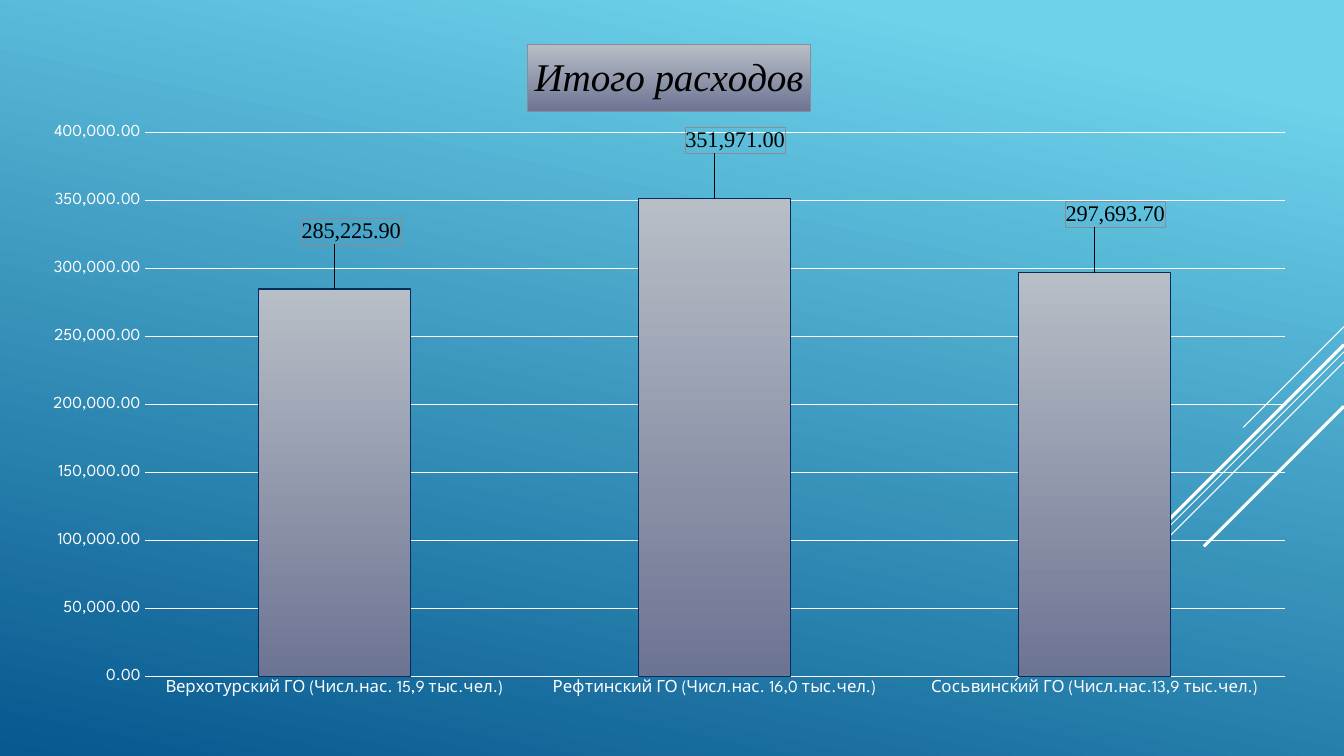
from dataclasses import dataclass

from lxml.etree import SubElement
from pptx import Presentation
from pptx.chart.data import CategoryChartData
from pptx.dml.color import RGBColor
from pptx.enum.chart import XL_CHART_TYPE, XL_LABEL_POSITION, XL_TICK_MARK
from pptx.enum.shapes import MSO_CONNECTOR
from pptx.oxml import parse_xml
from pptx.oxml.ns import nsdecls, qn
from pptx.util import Pt

TITLE = "Итого расходов"
EXPENSES = {
    "Верхотурский ГО (Числ.нас. 15,9 тыс.чел.)": 285225.9,
    "Рефтинский ГО (Числ.нас. 16,0 тыс.чел.)": 351971,
    "Сосьвинский ГО (Числ.нас.13,9 тыс.чел.)": 297693.7,
}
NUMBER_FORMAT = "#,##0.00"
LABEL_OFFSETS = [(0.013, -0.06), (0.016, -0.06), (0.016, -0.06)]  # shares of the chart

PAGE_WIDTH, PAGE_HEIGHT = 960, 540
CHART_BOX = (20.9, 18.7, 915.1, 488.9)
PLOT_AREA = {"x": 0.09, "y": 0.156, "w": 0.89, "h": 0.795}
TITLE_CORNER = {"x": 0.389, "y": 0.027}

# Diagonals rising at 45 degrees to the right edge: (height at the edge, run, width)
DIAGONALS = [
    (233.3, 72, 0.75),
    (251.3, 234.7, 0.75),
    (258.5, 149, 0.75),
    (246.2, 137.5, 2.25),
    (290.2, 100.1, 2.25),
]


@dataclass(frozen=True)
class Theme:
    sky: tuple = ((0.1, "6ED2EB"), (1, "06588E"))
    steel: tuple = ((0, "B8BEC6"), (1, "6C7493"))
    white: str = "FFFFFF"
    black: str = "000000"
    bar_edge: str = "052E5F"
    frame: str = "8F8A98"
    axis_font: str = "League Spartan"
    accent_font: str = "Times New Roman"
    axis_size: int = 12
    label_size: int = 16
    title_size: int = 28


THEME = Theme()


def fill_gradient(fill, stops, clockwise_angle):
    fill.gradient()
    fill.gradient_angle = 360 - clockwise_angle
    for stop, (position, color) in zip(fill.gradient_stops, stops):
        stop.position = position
        stop.color.rgb = RGBColor.from_string(color)


def set_line(line, color, width):
    line.color.rgb = RGBColor.from_string(color)
    line.width = Pt(width)


def set_font(font, name, size, color, italic=False):
    font.name = name
    font.size = Pt(size)
    font.color.rgb = RGBColor.from_string(color)
    font.bold = False
    font.italic = italic


def make_layout(places, edge=False, inner=False):
    """Return a manual chart layout; edge measures from the chart's corner."""
    layout = parse_xml(f"<c:layout {nsdecls('c')}><c:manualLayout/></c:layout>")
    settings = {"layoutTarget": "inner"} if inner else {}
    if edge:
        settings.update(xMode="edge", yMode="edge")
    for tag, value in {**settings, **places}.items():
        SubElement(layout[0], qn(f"c:{tag}")).set("val", str(value))
    return layout


def drop_layout(element):
    for layout in element.findall(qn("c:layout")):
        element.remove(layout)


def draw_diagonals(page):
    for edge_height, run, width in DIAGONALS:
        diagonal = page.shapes.add_connector(
            MSO_CONNECTOR.STRAIGHT, Pt(PAGE_WIDTH), Pt(edge_height),
            Pt(PAGE_WIDTH - run), Pt(edge_height + run))
        set_line(diagonal.line, THEME.white, width)
        SubElement(diagonal._element.spPr, qn("a:effectLst"))


def style_title(chart):
    title = chart.chart_title
    title.text_frame.text = TITLE
    set_font(title.text_frame.paragraphs[0].font, THEME.accent_font,
             THEME.title_size, THEME.black, italic=True)
    fill_gradient(title.format.fill, THEME.steel, 90)
    set_line(title.format.line, THEME.frame, 0.75)
    element = title._element
    drop_layout(element)
    element.find(qn("c:tx")).addnext(make_layout(TITLE_CORNER, edge=True))


def style_axes(chart):
    for axis in (chart.category_axis, chart.value_axis):
        set_font(axis.tick_labels.font, THEME.axis_font, THEME.axis_size, THEME.white)
        axis.major_tick_mark = axis.minor_tick_mark = XL_TICK_MARK.NONE
        axis.format.line.fill.background()
    values = chart.value_axis
    values.minimum_scale, values.maximum_scale, values.major_unit = 0, 400000, 50000
    values.tick_labels.number_format = NUMBER_FORMAT
    values.tick_labels.number_format_is_linked = False
    set_line(values.major_gridlines.format.line, THEME.white, 0.75)


def style_labels(series):
    labels = series.data_labels
    labels.show_value = True
    labels.number_format = NUMBER_FORMAT
    labels.number_format_is_linked = False
    set_font(labels.font, THEME.accent_font, THEME.label_size, THEME.black)
    for index, (x, y) in enumerate(LABEL_OFFSETS):
        label = series.points[index].data_label
        set_font(label.font, THEME.accent_font, THEME.label_size, THEME.black)
        label.position = XL_LABEL_POSITION.OUTSIDE_END
        element = labels._element.findall(qn("c:dLbl"))[index]
        for old in element.findall(qn("c:spPr")):
            element.remove(old)
        number_format = parse_xml(
            f'<c:numFmt {nsdecls("c")} formatCode="{NUMBER_FORMAT}" sourceLinked="0"/>')
        frame = parse_xml(
            f'<c:spPr {nsdecls("c", "a")}><a:noFill/><a:ln w="{Pt(0.5)}"><a:solidFill>'
            f'<a:srgbClr val="{THEME.frame}"/></a:solidFill></a:ln></c:spPr>')
        previous = element.find(qn("c:idx"))
        for part in (make_layout({"x": x, "y": y}), number_format, frame):
            previous.addnext(part)
            previous = part


def draw_chart(page):
    data = CategoryChartData(number_format=NUMBER_FORMAT)
    data.categories = list(EXPENSES)
    data.add_series("Series 1", list(EXPENSES.values()))
    chart = page.shapes.add_chart(
        XL_CHART_TYPE.COLUMN_CLUSTERED, *map(Pt, CHART_BOX), data).chart
    chart.has_legend = False
    set_font(chart.font, THEME.axis_font, 10, THEME.white)
    style_title(chart)
    style_axes(chart)

    plot = chart.plots[0]
    plot.gap_width = 150
    plot.vary_by_categories = False
    bars = plot.series[0]
    fill_gradient(bars.format.fill, THEME.steel, 90)
    set_line(bars.format.line, THEME.bar_edge, 0.75)
    style_labels(bars)

    plot_area = chart._chartSpace.chart.plotArea
    drop_layout(plot_area)
    plot_area.insert(0, make_layout(PLOT_AREA, edge=True, inner=True))


def main():
    deck = Presentation()
    deck.slide_width, deck.slide_height = Pt(PAGE_WIDTH), Pt(PAGE_HEIGHT)
    page = deck.slides.add_slide(deck.slide_layouts[6])
    fill_gradient(page.background.fill, THEME.sky, 102)
    draw_diagonals(page)
    draw_chart(page)
    deck.save("out.pptx")


if __name__ == "__main__":
    main()
